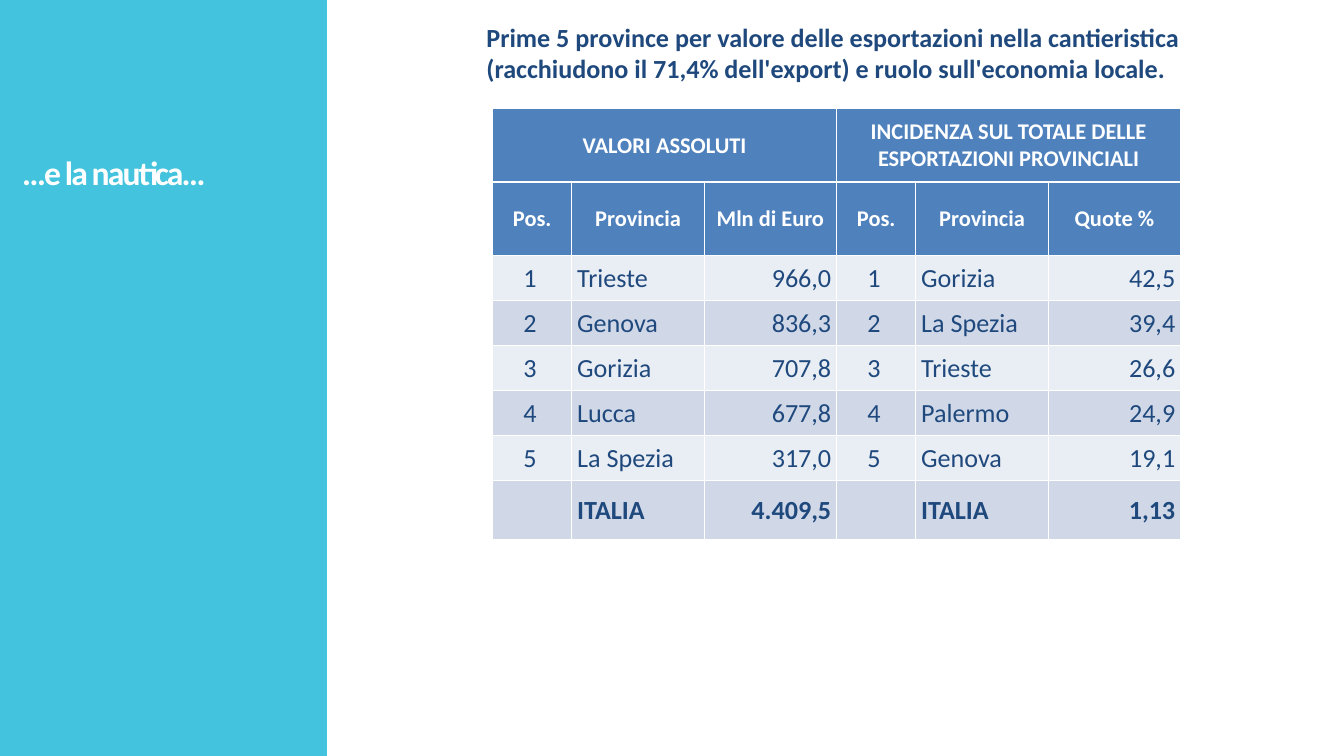
from lxml.etree import SubElement
from pptx import Presentation
from pptx.dml.color import RGBColor
from pptx.enum.shapes import MSO_SHAPE as Shape
from pptx.enum.text import MSO_ANCHOR as Anchor, PP_ALIGN as Align
from pptx.oxml.ns import qn
from pptx.util import Inches, Pt

COLUMNS, ROWS = 20, 11.25
CYAN, WHITE, NAVY, BLUE = "43C3DD", "FFFFFF", "1F497D", "4F81BD"
BANDS = ("E9EDF4", "D0D8E8")

COLUMN_WIDTHS = [1.18, 1.97, 1.97] * 2
ROW_HEIGHTS = [1.09] * 2 + [0.67] * 5 + [0.88]
GROUPS = ["VALORI ASSOLUTI", "INCIDENZA SUL TOTALE DELLE ESPORTAZIONI PROVINCIALI"]
HEADINGS = ["Pos.", "Provincia", "Mln di Euro", "Pos.", "Provincia", "Quote %"]
RANKING = [
    ("Trieste", "966,0", "Gorizia", "42,5"),
    ("Genova", "836,3", "La Spezia", "39,4"),
    ("Gorizia", "707,8", "Trieste", "26,6"),
    ("Lucca", "677,8", "Palermo", "24,9"),
    ("La Spezia", "317,0", "Genova", "19,1"),
]
TOTAL = ["", "ITALIA", "4.409,5", "", "ITALIA", "1,13"]


def color(value):
    return RGBColor.from_string(value)


class SlideBuilder:
    """Style and current slide; lengths are grid columns and rows."""

    font = "Calibri"

    def __init__(self, presentation):
        self.column = presentation.slide_width / COLUMNS
        self.row = presentation.slide_height / ROWS
        self.slide = presentation.slides.add_slide(presentation.slide_layouts[6])

    def box(self, left, top, width, height):
        return (round(left * self.column), round(top * self.row),
                round(width * self.column), round(height * self.row))

    def format(self, text_frame, size, ink, bold, align=None, spacing=None):
        for paragraph in text_frame.paragraphs:
            paragraph.alignment = align
            for run in paragraph.runs:
                font = run.font
                font.name, font.size, font.bold = self.font, Pt(size), bold
                font.color.rgb = color(ink)
                if spacing:
                    run._r.get_or_add_rPr().set("spc", str(spacing * 100))

    def panel(self, left, top, width, height, fill):
        shape = self.slide.shapes.add_shape(
            Shape.RECTANGLE, *self.box(left, top, width, height))
        shape.shadow.inherit = False
        shape.fill.solid()
        shape.fill.fore_color.rgb = color(fill)
        shape.line.fill.background()

    def text(self, words, left, top, width, height, size, ink, spacing=None):
        shape = self.slide.shapes.add_textbox(*self.box(left, top, width, height))
        text_frame = shape.text_frame
        text_frame.word_wrap = True
        text_frame.text = words
        self.format(text_frame, size, ink, True, spacing=spacing)
        return text_frame

    def table(self, left, top, widths, heights):
        frame = self.slide.shapes.add_table(
            len(heights), len(widths),
            *self.box(left, top, sum(widths), sum(heights)))
        for column, width in zip(frame.table.columns, widths):
            column.width = round(width * self.column)
        for row, height in zip(frame.table.rows, heights):
            row.height = round(height * self.row)
        return frame.table

    def borders(self, cell, top=1, bottom=1):
        properties = cell._tc.get_or_add_tcPr()
        for side, width in (("L", 1), ("R", 1), ("T", top), ("B", bottom)):
            line = SubElement(properties, qn(f"a:ln{side}"), w=str(Pt(width)))
            fill = SubElement(line, qn("a:solidFill"))
            SubElement(fill, qn("a:srgbClr"), val=WHITE)

    def cell(self, cell, words, fill, size, ink, bold, align, margins=None):
        cell.vertical_anchor = Anchor.MIDDLE
        if margins:
            cell.margin_left, cell.margin_right = map(Inches, margins)
            cell.margin_top, cell.margin_bottom = Inches(0.01), 0
        cell.fill.solid()
        cell.fill.fore_color.rgb = color(fill)
        cell.text_frame.text = words
        self.format(cell.text_frame, size, ink, bold, align)


def add_ranking(builder):
    table = builder.table(7.33, 1.62, COLUMN_WIDTHS, ROW_HEIGHTS)
    for row in range(len(ROW_HEIGHTS)):
        for column in range(len(COLUMN_WIDTHS)):
            builder.borders(table.cell(row, column),
                            top=3 if row == 1 else 1, bottom=3 if row == 0 else 1)

    # Group headings, each over three columns
    for index, words in enumerate(GROUPS):
        heading = table.cell(0, 3 * index)
        heading.merge(table.cell(0, 3 * index + 2))
        builder.cell(heading, words, BLUE, 24, WHITE, True, Align.CENTER)
    for column, words in enumerate(HEADINGS):
        builder.cell(table.cell(1, column), words, BLUE, 24, WHITE, True, Align.CENTER)

    # Banded ranking, closed by the national total
    body = [[str(place), *entry[:2], str(place), *entry[2:]]
            for place, entry in enumerate(RANKING, 1)] + [TOTAL]
    aligns = [Align.CENTER, Align.LEFT, Align.RIGHT] * 2
    margins = [(0.01, 0.08), (0.08, 0.01), (0.01, 0.08)] * 2
    for index, entry in enumerate(body):
        for column, words in enumerate(entry):
            builder.cell(table.cell(index + 2, column), words, BANDS[index % 2], 28,
                         NAVY, entry is TOTAL, aligns[column], margins[column])


def main():
    presentation = Presentation()
    presentation.slide_width, presentation.slide_height = Inches(20), Inches(11.25)
    builder = SlideBuilder(presentation)

    # Cyan side band and white content area
    builder.panel(0, 0, COLUMNS, ROWS, CYAN)
    builder.panel(4.87, 0, COLUMNS - 4.87, ROWS, WHITE)

    # Side title
    title = builder.text("…e la nautica…", 0.33, 2.21, 3.51, 0.63, 36, WHITE, -2)
    title.margin_left = title.margin_right = title.margin_bottom = 0
    title.margin_top = Inches(0.01)
    title.paragraphs[0].line_spacing = 1.07

    # Table and its caption
    add_ranking(builder)
    caption = builder.text(
        "Prime 5 province per valore delle esportazioni nella cantieristica "
        "(racchiudono il 71,4% dell'export) e ruolo sull'economia locale.",
        7.14, 0.26, 10.61, 1.04, 28, NAVY)
    caption.vertical_anchor = Anchor.MIDDLE

    presentation.save("out.pptx")


if __name__ == "__main__":
    main()
